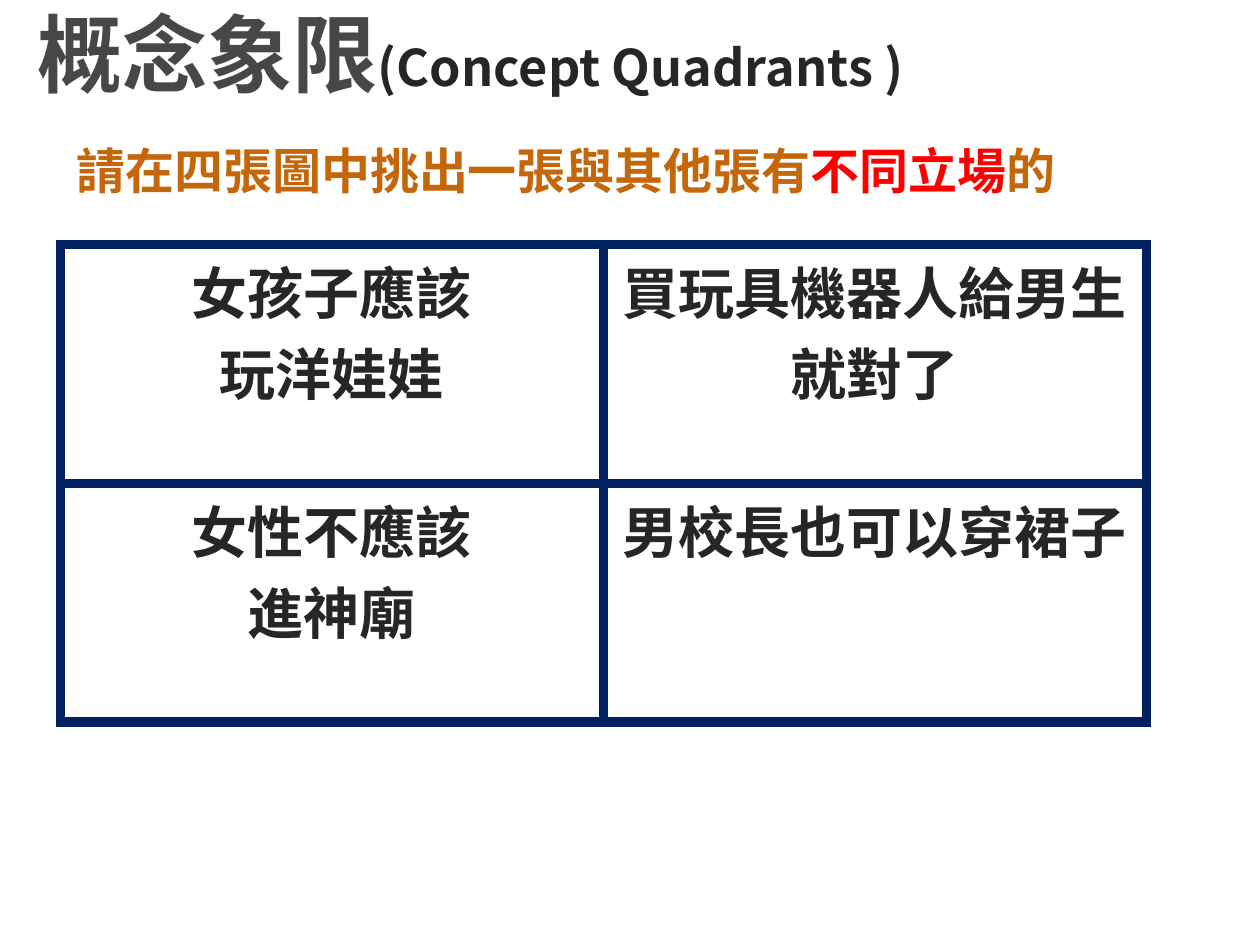
from lxml.etree import SubElement
from pptx import Presentation
from pptx.dml.color import RGBColor
from pptx.enum.text import MSO_ANCHOR, MSO_AUTO_SIZE, PP_ALIGN
from pptx.oxml.ns import qn
from pptx.util import Inches, Pt

FONT = "Noto Sans CJK SC"
NAVY, INK, GREY, ORANGE, RED, WHITE = "002060", "262626", "474747", "C4670A", "FF0000", "FFFFFF"


def color(value):
    return RGBColor.from_string(value)


def write(paragraph, runs):
    paragraph.font.name = FONT
    paragraph.font.bold = True
    SubElement(paragraph.font._rPr, qn("a:ea"), typeface=FONT)
    same_size = len({size for _, size, _ in runs}) == 1
    same_ink = len({ink for _, _, ink in runs}) == 1
    for words, size, ink in runs:
        run = paragraph.add_run()
        run.text = words
        (paragraph if same_size else run).font.size = Pt(size)
        (paragraph if same_ink else run).font.color.rgb = color(ink)


deck = Presentation()
deck.slide_width, deck.slide_height = Inches(10), Inches(7.5)
W, H = deck.slide_width, deck.slide_height
slide = deck.slides.add_slide(deck.slide_layouts[6])

title = slide.shapes.add_textbox(int(W * 0.02), Inches(0.04), int(W * 0.92), int(H * 0.1)).text_frame
title.word_wrap = True
title.vertical_anchor = MSO_ANCHOR.MIDDLE
write(title.paragraphs[0], [("概念象限", 48.6, GREY), ("(Concept Quadrants )", 28.8, INK)])

task = slide.shapes.add_textbox(Inches(0.51), Inches(1.07), Inches(8.06), Inches(0.57)).text_frame
task.word_wrap = False
task.auto_size = MSO_AUTO_SIZE.SHAPE_TO_FIT_TEXT
write(task.paragraphs[0], [
    ("請在四張圖中挑出一張與其他張有", 28, ORANGE),
    ("不同立場", 28, RED),
    ("的", 28, ORANGE),
])

statements = [
    [["女孩子應該", "玩洋娃娃"], ["買玩具機器人給男生就對了"]],
    [["女性不應該", "進神廟"], ["男校長也可以穿裙子"]],
]
quadrants = slide.shapes.add_table(
    2, 2, Inches(0.48), Inches(1.94), Inches(8.62), Inches(3.79)).table
quadrants.first_row = quadrants.horz_banding = False

for row, pair in enumerate(statements):
    for column, lines in enumerate(pair):
        quadrant = quadrants.cell(row, column)
        quadrant.margin_left = quadrant.margin_right = Inches(0.07)
        quadrant.margin_top = quadrant.margin_bottom = Inches(0.04)
        properties = quadrant._tc.get_or_add_tcPr()
        for side in ("lnL", "lnR", "lnT", "lnB"):
            border = SubElement(properties, qn(f"a:{side}"), w=str(Pt(6)))
            SubElement(SubElement(border, qn("a:solidFill")), qn("a:srgbClr"), val=NAVY)
        quadrant.fill.solid()
        quadrant.fill.fore_color.rgb = color(WHITE)
        SubElement(properties.find(qn("a:solidFill"))[0], qn("a:alpha"), val="48000")
        for number, line in enumerate(lines):
            frame = quadrant.text_frame
            statement = frame.add_paragraph() if number else frame.paragraphs[0]
            statement.alignment = PP_ALIGN.CENTER
            write(statement, [(line, 32, INK)])

deck.save("out.pptx")
